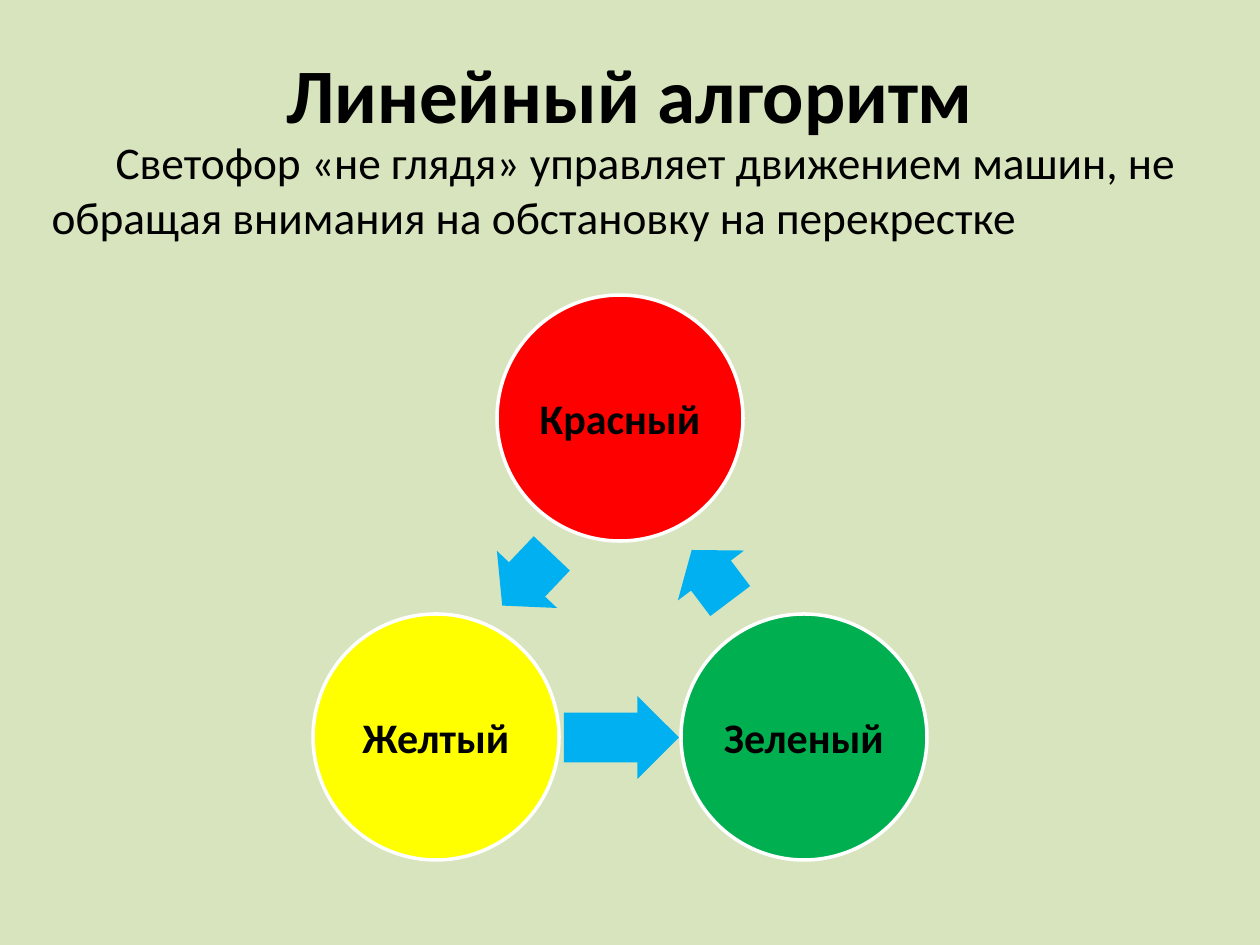
import pptx
import pptx.dml.color
import pptx.enum.shapes
import pptx.enum.text
import pptx.oxml.ns
import pptx.util
from lxml import etree

PX = 914400 / 126  # EMU per pixel
KIND = pptx.enum.shapes.MSO_SHAPE
ALIGN = pptx.enum.text.PP_ALIGN
MID = pptx.enum.text.MSO_ANCHOR.MIDDLE
TOP = pptx.enum.text.MSO_ANCHOR.TOP


def paint(item, color):
    item.fill.solid()
    item.fill.fore_color.rgb = pptx.dml.color.RGBColor.from_string(color)


def write(shape, text, size, bold=False, align=ALIGN.CENTER, anchor=MID,
          indent=None, inset=None):
    frame = shape.text_frame
    frame.word_wrap = True
    frame.auto_size = pptx.enum.text.MSO_AUTO_SIZE.NONE
    frame.vertical_anchor = anchor
    if inset is not None:
        frame.margin_left = frame.margin_right = int(inset * PX)
        frame.margin_top = frame.margin_bottom = int(inset * PX)
    para = frame.paragraphs[0]
    para.text = text
    para.alignment = align
    para.space_before = pptx.util.Pt(0)
    if indent is not None:
        props = para._p.get_or_add_pPr()
        props.set("marL", "0")
        props.set("indent", str(int(indent * PX)))
        etree.SubElement(props, pptx.oxml.ns.qn("a:buNone"))
    font = para.font
    font.name, font.size, font.bold = "Calibri", pptx.util.Pt(size), bold
    paint(font, "000000")


deck = pptx.Presentation()
deck.slide_width, deck.slide_height = int(1260 * PX), int(945 * PX)
slide = deck.slides.add_slide(deck.slide_layouts[1])
paint(slide.background, "D7E4BD")

# Title and body
title, body = slide.placeholders
for holder, box in ((title, (63, 38, 1134, 110)), (body, (39, 128, 1162, 144))):
    holder.left, holder.top, holder.width, holder.height = (int(v * PX) for v in box)
write(title, "Линейный алгоритм", 44, bold=True)
write(body, "Светофор «не глядя» управляет движением машин, "
      "не обращая внимания на обстановку на перекрестке",
      25.9, align=ALIGN.LEFT, anchor=TOP, indent=64)

# Traffic lights
SIZE = 246
lights = [("Красный", "FF0000", 497, 295),
          ("Зеленый", "00B050", 681, 614),
          ("Желтый", "FFFF00", 313, 614)]
for name, color, x, y in lights:
    light = slide.shapes.add_shape(
        KIND.OVAL, *(int(v * PX) for v in (x, y, SIZE, SIZE)))
    light.shadow.inherit = False
    paint(light, color)
    paint(light.line, "FFFFFF")
    light.line.width = pptx.util.Pt(2)
    write(light, name, 24, bold=True, inset=4)

# Arrows of the cycle: left, top, width, turn
for x, y, width, turn in ((679, 534, 64, 233), (564, 696, 115, 0),
                          (491, 538, 72, 133.5)):
    arrow = slide.shapes.add_shape(
        KIND.RIGHT_ARROW, *(int(v * PX) for v in (x, y, width, 83)))
    arrow.shadow.inherit = False
    arrow.adjustments[0], arrow.adjustments[1] = 0.6, 0.5
    arrow.rotation = turn
    paint(arrow, "00B0F0")
    arrow.line.fill.background()

deck.save("out.pptx")
